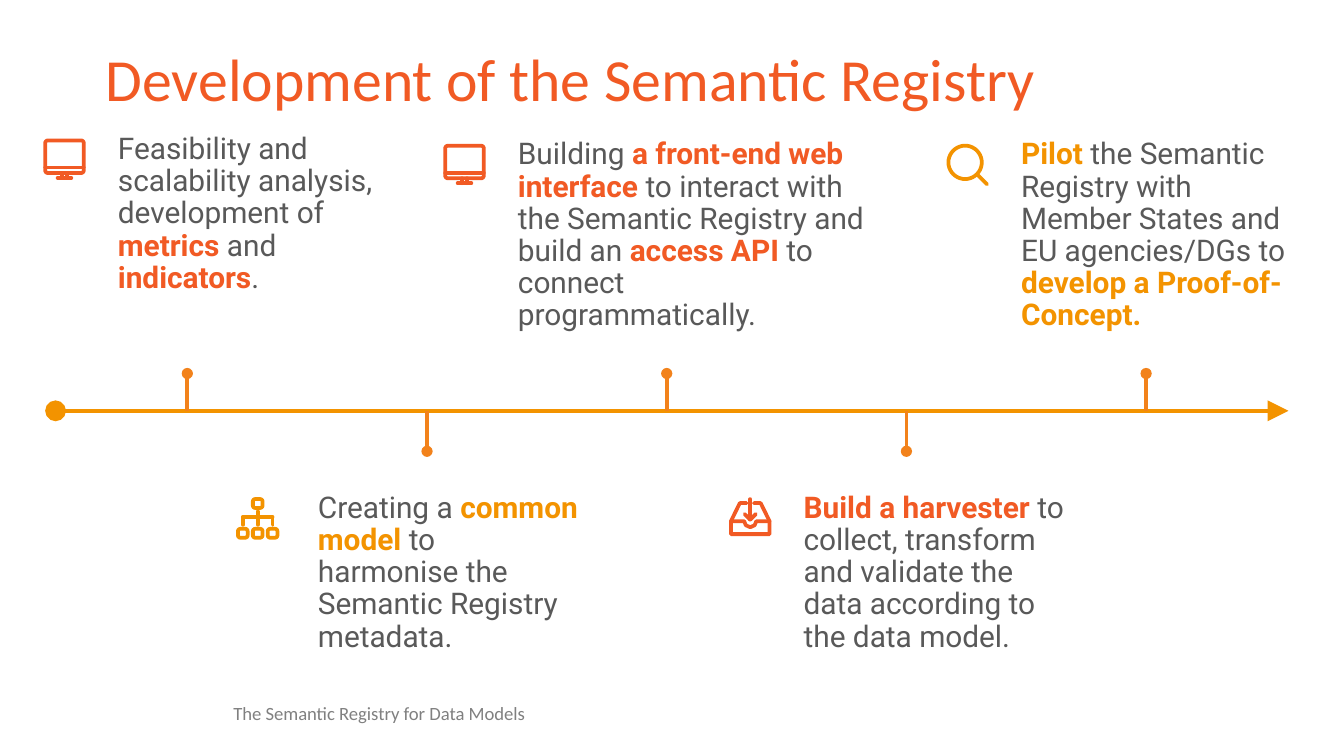
import math
from dataclasses import dataclass

import pptx
import pptx.dml.color
import pptx.enum.shapes
import pptx.enum.text
import pptx.oxml.ns
import pptx.util
from lxml import etree

Cm = pptx.util.Cm
Pt = pptx.util.Pt
ANCHORS = pptx.enum.text.MSO_ANCHOR
qn = pptx.oxml.ns.qn


@dataclass(frozen=True)
class Theme:
    red: str = "F15A24"
    amber: str = "F39300"
    orange: str = "F2821B"
    body: str = "595959"
    muted: str = "808080"
    heading_font: str = "Calibri"
    body_font: str = "Roboto"
    title_size: float = 32
    body_size: float = 16
    footer_size: float = 10
    icon_line: float = 2
    icon_size: float = 0.76


@dataclass(frozen=True)
class Box:
    """A region of the slide, in centimetres."""
    left: float
    top: float
    width: float
    height: float

    def point(self, x, y):
        """Slide position of a point given as fractions of the box."""
        return Cm(self.left + x * self.width), Cm(self.top + y * self.height)


THEME = Theme()


def rgb(colour):
    return pptx.dml.color.RGBColor.from_string(colour)


def add_text(canvas, box, runs, font, size, anchor=ANCHORS.TOP, inset=(0.25, 0.13)):
    """Place one paragraph of (text, colour, bold) runs."""
    shape = canvas.shapes.add_textbox(Cm(box.left), Cm(box.top), Cm(box.width), Cm(box.height))
    frame = shape.text_frame
    frame.word_wrap = True
    frame.vertical_anchor = anchor
    frame.margin_left = frame.margin_right = Cm(inset[0])
    frame.margin_top = frame.margin_bottom = Cm(inset[1])
    paragraph = frame.paragraphs[0]
    paragraph.line_spacing = 0.9
    for text, colour, bold in runs:
        run = paragraph.add_run()
        run.text = text
        run.font.name = font
        run.font.size = Pt(size)
        run.font.bold = bold
        run.font.color.rgb = rgb(colour)


def add_line(slide, start, end, colour, width, head=None, tail=None, end_size="med"):
    """Draw a straight line with optional end marks."""
    line = slide.shapes.add_connector(pptx.enum.shapes.MSO_CONNECTOR.STRAIGHT, *start, *end)
    line.line.color.rgb = rgb(colour)
    line.line.width = Pt(width)
    properties = line.element.spPr
    outline = properties.find(qn("a:ln"))
    for tag, kind in (("a:headEnd", head), ("a:tailEnd", tail)):
        if kind:
            etree.SubElement(outline, qn(tag), type=kind, w=end_size, len=end_size)
    etree.SubElement(properties, qn("a:effectLst"))


def add_icon(canvas, box, strokes, colour):
    """Draw all strokes of an icon, given as fractional points, in one outline."""
    builder = None
    for stroke in strokes:
        start, *others = [box.point(*point) for point in stroke]
        if builder is None:
            builder = canvas.shapes.build_freeform(*start)
        else:
            builder.move_to(*start)
        builder.add_line_segments(others, close=stroke[0] == stroke[-1])
    shape = builder.convert_to_shape()
    shape.shadow.inherit = False
    shape.fill.background()
    shape.line.color.rgb = rgb(colour)
    shape.line.width = Pt(THEME.icon_line)
    outline = shape.element.spPr.find(qn("a:ln"))
    outline.set("cap", "rnd")
    etree.SubElement(outline, qn("a:round"))


def rounded_frame(left, top, right, bottom, radius, steps=10):
    """Closed stroke around a rectangle with rounded corners."""
    centres = [(right - radius, bottom - radius), (left + radius, bottom - radius),
               (left + radius, top + radius), (right - radius, top + radius)]
    points = []
    for quarter, (x, y) in enumerate(centres):
        for step in range(steps + 1):
            angle = math.pi / 2 * (quarter + step / steps)
            points.append((x + radius * math.cos(angle), y + radius * math.sin(angle)))
    return points + points[:1]


def monitor_strokes():
    return [rounded_frame(0.02, 0.02, 0.98, 0.83, 0.07),
            [(0.02, 0.69), (0.98, 0.69)],
            [(0.43, 0.83), (0.43, 0.95)], [(0.57, 0.83), (0.57, 0.95)],
            [(0.33, 0.95), (0.67, 0.95)]]


def magnifier_strokes():
    return [rounded_frame(0.02, 0.02, 0.85, 0.85, 0.415), [(0.74, 0.74), (0.98, 0.98)]]


def network_strokes():
    branches = (0.13, 0.5, 0.87)
    nodes = [(0.5, 0.13)] + [(x, 0.87) for x in branches]
    frames = [rounded_frame(x - 0.12, y - 0.11, x + 0.12, y + 0.11, 0.06) for x, y in nodes]
    drops = [[(x, 0.47), (x, 0.66)] for x in branches]
    return frames + drops + [[(0.5, 0.33), (0.5, 0.47)],
                             [(branches[0], 0.47), (branches[-1], 0.47)]]


def tray_strokes():
    return [[(0.41, 0.12), (0.24, 0.12), (0.02, 0.57), (0.02, 0.89),
             (0.98, 0.89), (0.98, 0.57), (0.76, 0.12), (0.59, 0.12)],
            [(0.02, 0.57), (0.35, 0.57), (0.39, 0.67), (0.5, 0.72),
             (0.61, 0.67), (0.65, 0.57), (0.98, 0.57)],
            [(0.5, 0.02), (0.5, 0.53)],
            [(0.36, 0.39), (0.5, 0.53), (0.64, 0.39)]]


def add_milestone(slide, box, strokes, colour, runs, text_offset=1.14):
    """Group an icon with the text beside it; runs are (text, highlighted)."""
    group = slide.shapes.add_group_shape()
    text_box = Box(box.left + text_offset, box.top, box.width - text_offset, box.height)
    coloured = [(text, colour if strong else THEME.body, strong) for text, strong in runs]
    add_text(group, text_box, coloured, THEME.body_font, THEME.body_size)
    icon_box = Box(box.left, box.top + 0.24, THEME.icon_size, THEME.icon_size)
    add_icon(group, icon_box, strokes, colour)


def add_timeline(slide, box, first_mark=2.49, step=4.53, marks=5):
    """Arrow across the box with marks alternating above and below."""
    axis = 0.48
    add_line(slide, box.point(0, axis), box.point(1, axis), THEME.amber, 2.25,
             head="oval", tail="triangle", end_size="lg")
    for index in range(marks):
        x = (first_mark + index * step) / box.width
        add_line(slide, box.point(x, index % 2), box.point(x, axis), THEME.orange, 2, head="oval")


def add_heading(slide, box):
    add_text(slide, box, [("Development of the Semantic Registry", THEME.red, False)],
             THEME.heading_font, THEME.title_size, ANCHORS.MIDDLE)


def add_footer(slide, box):
    add_text(slide, box, [("The Semantic Registry for Data Models", THEME.muted, False)],
             THEME.heading_font, THEME.footer_size, ANCHORS.BOTTOM, (0, 0))


def main():
    presentation = pptx.Presentation()
    presentation.slide_width, presentation.slide_height = Cm(25.4), Cm(14.29)
    slide = presentation.slides.add_slide(presentation.slide_layouts[6])
    add_heading(slide, Box(1.75, 0.76, 21.9, 1.6))
    add_footer(slide, Box(4.41, 13.23, 7.7, 0.46))
    add_milestone(slide, Box(17.91, 2.5, 6.69, 3.4), magnifier_strokes(), THEME.amber, [
        ("Pilot", True),
        (" the Semantic Registry with Member States and EU agencies/DGs to ", False),
        ("develop a Proof-of-Concept.", True)])
    add_milestone(slide, Box(13.8, 9.18, 6.64, 3.4), tray_strokes(), THEME.red, [
        ("Build a harvester ", True),
        ("to collect, transform and validate the data according to the data model.", False)])
    add_milestone(slide, Box(4.49, 9.18, 6.77, 3.4), network_strokes(), THEME.amber, [
        ("Creating a ", False), ("common model ", True),
        ("to harmonise the Semantic Registry metadata.", False)], text_offset=1.27)
    add_milestone(slide, Box(8.4, 2.5, 8.24, 3.4), monitor_strokes(), THEME.red, [
        ("Building ", False), ("a front-end web interface ", True),
        ("to interact with the Semantic Registry and build an ", False),
        ("access API", True), (" to connect programmatically.", False)])
    add_milestone(slide, Box(0.84, 2.4, 6.64, 3.4), monitor_strokes(), THEME.red, [
        ("Feasibility and scalability analysis, development of ", False),
        ("metrics", True), (" and ", False), ("indicators", True), (".", False)])
    add_timeline(slide, Box(1.05, 7.06, 23.3, 1.47))
    presentation.save("out.pptx")


if __name__ == "__main__":
    main()
